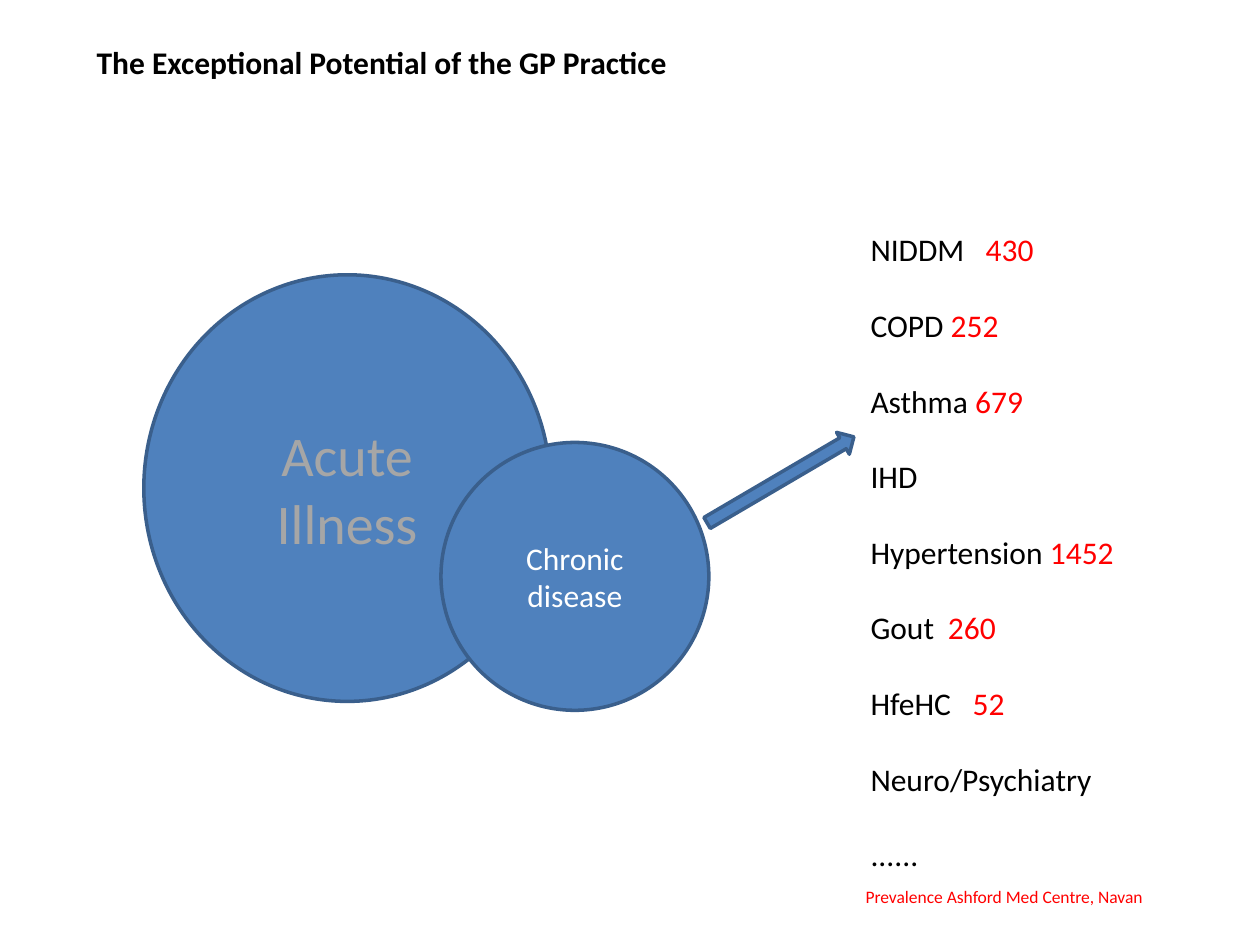
from lxml.etree import SubElement
from pptx import Presentation
from pptx.dml.color import RGBColor
from pptx.enum.shapes import MSO_SHAPE
from pptx.enum.text import MSO_ANCHOR, PP_ALIGN
from pptx.oxml.ns import qn
from pptx.util import Cm, Pt

COLORS = {
    "blue": "4F81BD",
    "edge": "3A5F8C",
    "grey": "A6A6A6",
    "white": "FFFFFF",
    "black": "000000",
    "red": "FF0000",
}

# Condition, patient count, tab stop in cm (None: one plain space)
ROWS = [
    ("NIDDM", "430", 2.32),
    ("COPD", "252", None),
    ("Asthma", "679", None),
    ("IHD", "", None),
    ("Hypertension", "1452", None),
    ("Gout", "260", 1.56),
    ("HfeHC", "52", 2.06),
    ("Neuro/Psychiatry", "", None),
    ("......", "", None),
]


class Painter:
    """Holds the style and the current slide."""

    font = "Calibri"

    def __init__(self, slide):
        self.shapes = slide.shapes

    def color(self, name):
        return RGBColor.from_string(COLORS[name])

    def format(self, run, size, color, bold=False):
        run.font.name = self.font
        run.font.size = Pt(size)
        run.font.bold = bold
        run.font.color.rgb = self.color(color)

    def shape(self, kind, box, turn=0):
        shape = self.shapes.add_shape(kind, *map(Cm, box))
        shape.shadow.inherit = False
        shape.fill.solid()
        shape.fill.fore_color.rgb = self.color("blue")
        shape.line.color.rgb = self.color("edge")
        shape.line.width = Pt(2)
        shape.rotation = turn
        return shape

    def circle(self, box, text, size, color):
        frame = self.shape(MSO_SHAPE.OVAL, box).text_frame
        frame.text = text
        frame.word_wrap = True
        frame.vertical_anchor = MSO_ANCHOR.MIDDLE
        line = frame.paragraphs[0]
        line.alignment = PP_ALIGN.CENTER
        self.format(line.runs[0], size, color)

    def arrow(self, box, turn):
        self.shape(MSO_SHAPE.RIGHT_ARROW, box, turn)

    def label(self, box, text, size, color, bold=False):
        frame = self.shapes.add_textbox(*map(Cm, box)).text_frame
        frame.word_wrap = True
        frame.text = text
        self.format(frame.paragraphs[0].runs[0], size, color, bold)

    def counts(self, box, rows, size):
        """Lists each condition in black with its count in red."""
        frame = self.shapes.add_textbox(*map(Cm, box)).text_frame
        frame.word_wrap = True
        for index, (name, count, stop) in enumerate(rows):
            line = frame.paragraphs[0] if index == 0 else frame.add_paragraph()
            if index:
                line.space_before = Pt(21.6)
            gap = "\t" if stop else " "
            parts = [(name + gap, "black"), (count, "red")] if count else [(name, "black")]
            for text, color in parts:
                run = line.add_run()
                run.text = text
                self.format(run, size, color)
            if stop:
                tabs = SubElement(line._p.get_or_add_pPr(), qn("a:tabLst"))
                SubElement(tabs, qn("a:tab"), pos=str(Cm(stop)), algn="l")


def main():
    deck = Presentation()
    deck.slide_width, deck.slide_height = Cm(25.4), Cm(19.05)
    paint = Painter(deck.slides.add_slide(deck.slide_layouts[6]))

    paint.label((1.7, 0.74, 23.2, 4.1), "The Exceptional Potential of the GP Practice",
                18, "black", bold=True)
    paint.circle((2.9, 5.54, 8.2, 8.6), "Acute Illness", 32, "grey")
    paint.circle((8.89, 8.92, 5.4, 5.4), "Chronic disease", 18, "white")
    paint.arrow((14.02, 9.42, 3.43, 0.51), 329.6)
    paint.counts((17.3, 4.52, 6.8, 14.1), ROWS, 18)
    paint.label((17.2, 17.73, 8.2, 0.69), "Prevalence Ashford Med Centre, Navan", 10, "red")

    deck.save("out.pptx")


if __name__ == "__main__":
    main()
